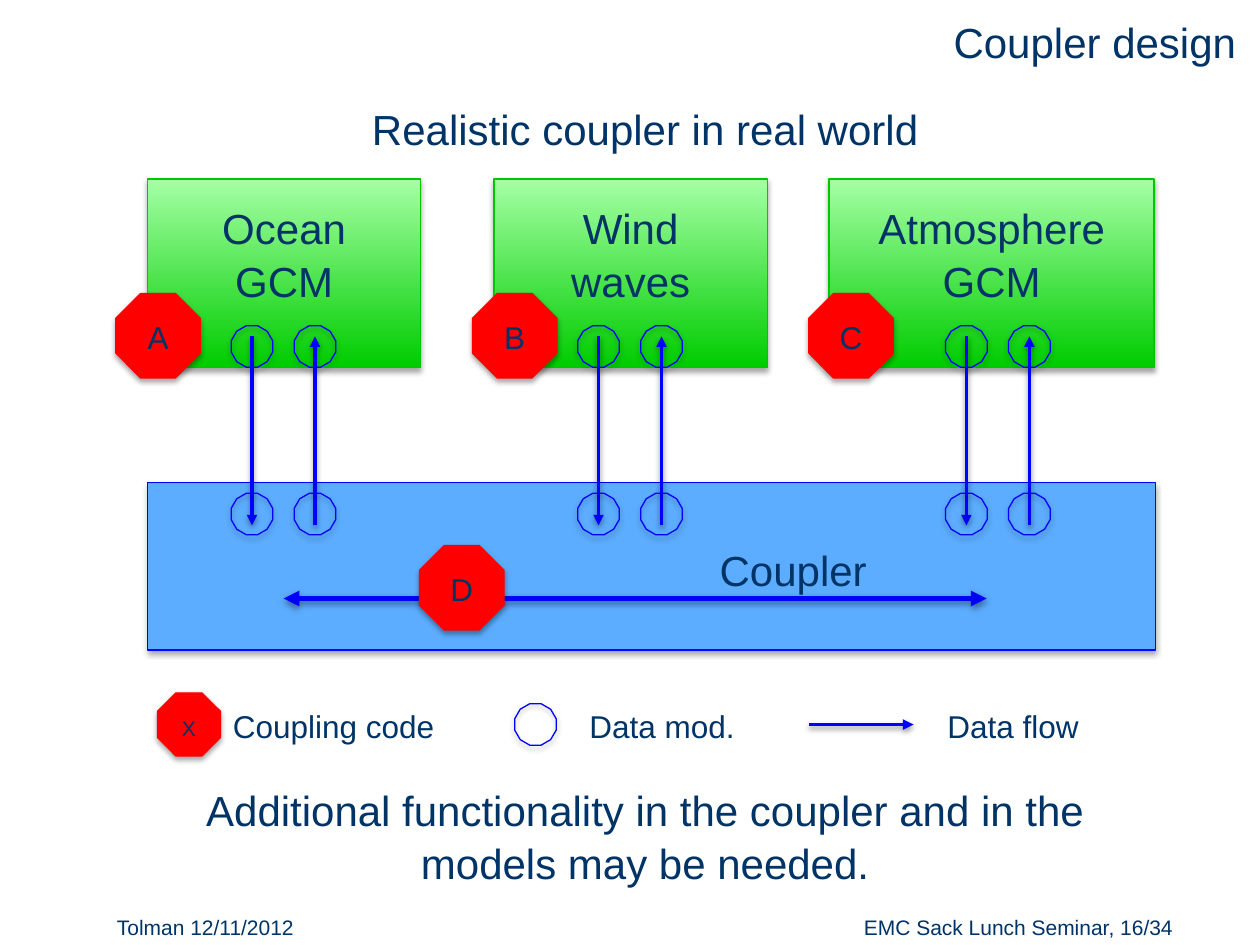
from dataclasses import dataclass

from lxml import etree
from pptx import Presentation
from pptx.dml.color import RGBColor
from pptx.enum import shapes, text
from pptx.oxml import ns
from pptx.util import Inches, Pt


def rgb(value):
    return RGBColor.from_string(value)


@dataclass
class Diagram:
    slide: object
    font: str = "Arial"
    ink: str = "003366"
    flow: str = "0000FF"
    code: str = "FF0000"
    bar: str = "5CADFF"
    model: tuple = ("00CC00", "A5FFA5")
    model_edge: str = "00C800"

    def set_words(self, frame, words, size, align):
        frame.word_wrap = True
        frame.text = words
        paragraph = frame.paragraphs[0]
        paragraph.alignment = align
        paragraph.font.size = Pt(size)
        paragraph.font.name = self.font
        paragraph.font.color.rgb = rgb(self.ink)
        return paragraph

    def title(self, words, left, top, width, height):
        holder = self.slide.shapes.title
        holder.left, holder.top = Inches(left), Inches(top)
        holder.width, holder.height = Inches(width), Inches(height)
        holder.text_frame.vertical_anchor = text.MSO_ANCHOR.MIDDLE
        self.set_words(holder.text_frame, words, 24, text.PP_ALIGN.RIGHT)

    def label(self, words, left, top, width, height, size=24,
              align=text.PP_ALIGN.CENTER):
        box = self.slide.shapes.add_textbox(
            Inches(left), Inches(top), Inches(width), Inches(height))
        paragraph = self.set_words(box.text_frame, words, size, align)
        paragraph.line_spacing = 1.05

    def shadow(self, element, distance, opacity):
        effects = etree.SubElement(element, ns.qn("a:effectLst"))
        outer = etree.SubElement(
            effects, ns.qn("a:outerShdw"), blurRad="40000",
            dist=str(distance), dir="5400000", rotWithShape="0")
        color = etree.SubElement(outer, ns.qn("a:srgbClr"), val="000000")
        etree.SubElement(color, ns.qn("a:alpha"), val=str(opacity))

    def shape(self, kind, left, top, width, height, edge, fill=None):
        item = self.slide.shapes.add_shape(
            kind, Inches(left), Inches(top), Inches(width), Inches(height))
        if fill is None:
            item.fill.background()
        elif isinstance(fill, tuple):
            item.fill.gradient()
            item.fill.gradient_angle = 90
            for stop, color in zip(item.fill.gradient_stops, fill):
                stop.color.rgb = rgb(color)
        else:
            item.fill.solid()
            item.fill.fore_color.rgb = rgb(fill)
        item.line.color.rgb = rgb(edge)
        item.line.width = Pt(0.75)
        self.shadow(item._element.spPr, 23000, 35000)

    def box(self, left, top, width, height, edge, fill):
        self.shape(shapes.MSO_SHAPE.RECTANGLE, left, top, width, height,
                   edge, fill)

    def marker(self, letter, left, top, side=0.67, size=18):
        self.shape(shapes.MSO_SHAPE.OCTAGON, left, top, side, side,
                   self.code, self.code)
        height = 0.41 if size == 18 else 0.26
        self.label(letter, left + 0.08, top + (side - height) / 2,
                   side - 0.16, height, size)

    def port(self, center, middle):
        side = 0.33
        self.shape(shapes.MSO_SHAPE.DODECAGON, center - side / 2,
                   middle - side / 2, side, side, self.flow)

    def arrow(self, start, end, width=2, ends=("tailEnd",)):
        line = self.slide.shapes.add_connector(
            shapes.MSO_CONNECTOR.STRAIGHT, *map(Inches, start + end))
        line.line.color.rgb = rgb(self.flow)
        line.line.width = Pt(width)
        for tip in ends:
            etree.SubElement(line.line._ln, ns.qn(f"a:{tip}"),
                             type="triangle")
        self.shadow(line._element.spPr, 20000, 38000)


def main():
    deck = Presentation()
    deck.slide_width, deck.slide_height = Inches(10), Inches(7.5)
    diagram = Diagram(deck.slides.add_slide(deck.slide_layouts[5]))
    left_aligned, right_aligned = text.PP_ALIGN.LEFT, text.PP_ALIGN.RIGHT

    diagram.title("Coupler design", 4.08, 0.08, 5.83, 0.5)
    diagram.label("Realistic coupler in real world", 1.08, 0.75, 8.08, 0.5)

    models = [
        ("Ocean GCM", 1.17, 2.17, 1.83, "A", 0.92, 2),
        ("Wind waves", 3.92, 2.17, 1.83, "B", 3.75, 4.75),
        ("Atmosphere GCM", 6.58, 2.58, 2.19, "C", 6.42, 7.67),
    ]
    for name, left, width, name_width, *_ in models:
        diagram.box(left, 1.42, width, 1.5, diagram.model_edge, diagram.model)
        diagram.label(name, left + (width - name_width) / 2, 1.54,
                      name_width, 0.91)

    diagram.box(1.17, 3.83, 8, 1.33, diagram.flow, diagram.bar)
    diagram.label("Coupler", 4.67, 4.25, 3.25, 0.5)
    diagram.arrow((2.25, 4.75), (7.83, 4.75), 3, ("headEnd", "tailEnd"))
    diagram.marker("D", 3.33, 4.33)

    for *_, letter, marker_left, outflow in models:
        for center, tip in ((outflow, "tailEnd"), (outflow + 0.5, "headEnd")):
            diagram.arrow((center, 2.67), (center, 4.17), ends=(tip,))
            for middle in (2.75, 4.08):
                diagram.port(center, middle)
        diagram.marker(letter, marker_left, 2.33)

    diagram.marker("X", 1.25, 5.5, 0.5, 12)
    diagram.port(4.25, 5.75)
    diagram.arrow((6.42, 5.75), (7.25, 5.75))
    for meaning, left, width in (("Coupling code", 1.75, 1.83),
                                 ("Data mod.", 4.58, 1.42),
                                 ("Data flow", 7.42, 1.42)):
        diagram.label(meaning, left, 5.55, width, 0.4, 18, left_aligned)

    diagram.label("Additional functionality in the coupler and in the models "
                  "may be needed.", 1.08, 6.16, 8.08, 0.91)
    diagram.label("Tolman 12/11/2012", 0.83, 7.2, 3, 0.3, 12, left_aligned)
    diagram.label("EMC Sack Lunch Seminar, 16/34", 6.08, 7.2, 3.33, 0.3, 12,
                  right_aligned)
    deck.save("out.pptx")


if __name__ == "__main__":
    main()
